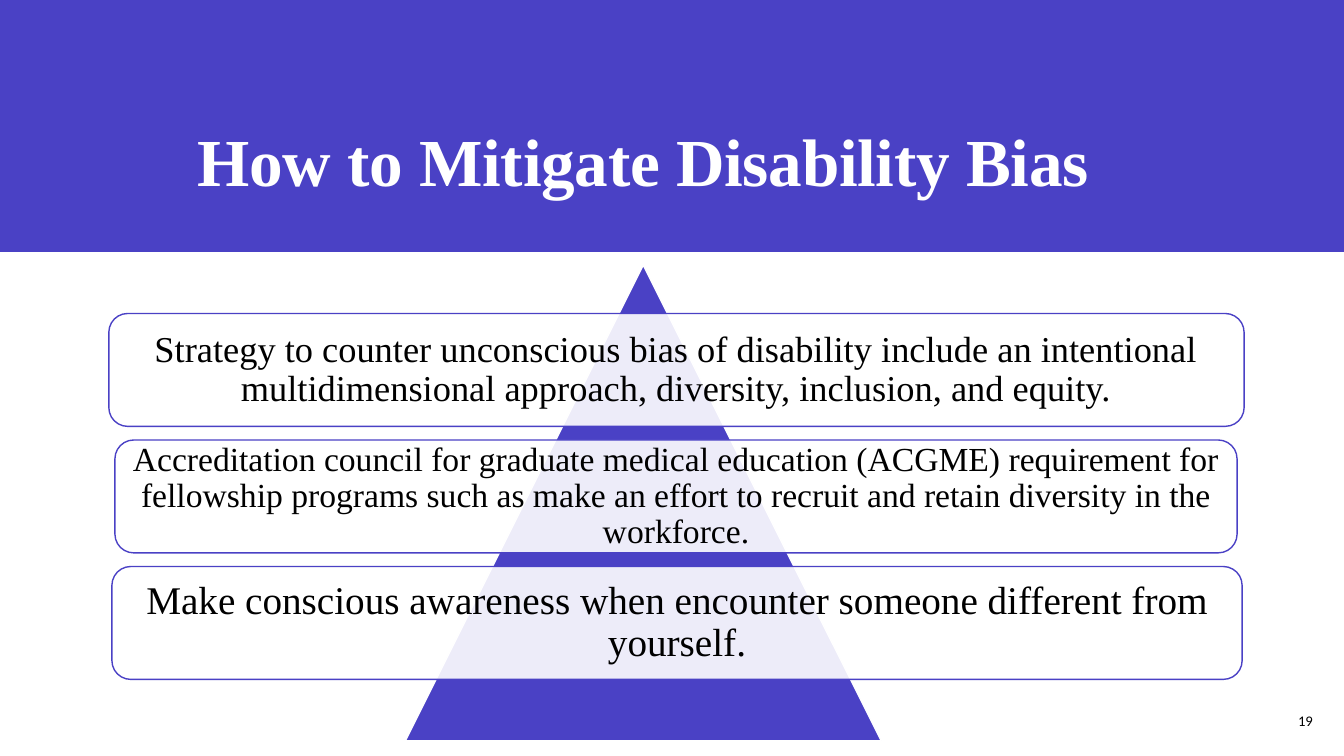
from dataclasses import dataclass

from lxml import etree
from pptx import Presentation
from pptx.dml.color import RGBColor
from pptx.enum.shapes import MSO_SHAPE
from pptx.enum.text import MSO_ANCHOR, MSO_AUTO_SIZE, PP_ALIGN
from pptx.oxml.ns import qn
from pptx.shapes.autoshape import Shape
from pptx.slide import Slide
from pptx.text.text import TextFrame
from pptx.util import Inches, Pt

RECT = MSO_SHAPE.RECTANGLE
TRIANGLE = MSO_SHAPE.ISOSCELES_TRIANGLE
ROUNDED = MSO_SHAPE.ROUNDED_RECTANGLE
MIDDLE, BOTTOM = MSO_ANCHOR.MIDDLE, MSO_ANCHOR.BOTTOM
CENTER, RIGHT = PP_ALIGN.CENTER, PP_ALIGN.RIGHT
NO_FIT = MSO_AUTO_SIZE.NONE


@dataclass(frozen=True)
class Theme:
    accent: RGBColor = RGBColor(0x4A, 0x41, 0xC5)
    white: RGBColor = RGBColor(0xFF, 0xFF, 0xFF)
    black: RGBColor = RGBColor(0, 0, 0)
    serif: str = "Times New Roman"
    sans: str = "Calibri"
    title_size: float = 48
    number_size: float = 10.5
    strategy_sizes: tuple[float, ...] = (26, 24, 28)


@dataclass(frozen=True)
class Strategy:
    text: str
    left: float
    width: float
    size: float
    inset: float


THEME = Theme()
STRATEGY_TOP, STRATEGY_HEIGHT, STRATEGY_PITCH = 3.11, 1.12, 1.255
STRATEGIES = [
    Strategy("Strategy to counter unconscious bias of disability include an intentional "
             "multidimensional approach, diversity, inclusion, and equity.",
             1.08, 11.26, THEME.strategy_sizes[0], 0.11),
    Strategy("Accreditation council for graduate medical education (ACGME) requirement for "
             "fellowship programs such as make an effort to recruit and retain diversity in "
             "the workforce.",
             1.14, 11.13, THEME.strategy_sizes[1], 0.1),
    Strategy("Make conscious awareness when encounter someone different from yourself.",
             1.11, 11.21, THEME.strategy_sizes[2], 0.12),
]


def add_block(s: Slide, kind: MSO_SHAPE, left: float, top: float, width: float,
              height: float, fill: RGBColor, line: RGBColor | None = None) -> Shape:
    sp = s.shapes.add_shape(kind, Inches(left), Inches(top), Inches(width), Inches(height))
    sp.shadow.inherit = False
    sp.fill.solid()
    sp.fill.fore_color.rgb = fill
    if line is None:
        sp.line.fill.background()
    else:
        sp.line.color.rgb = line
        sp.line.width = Pt(1)
    return sp


def set_opacity(sp: Shape, percent: int) -> None:
    color = sp._element.spPr.find(qn("a:solidFill"))[0]
    etree.SubElement(color, qn("a:alpha")).set("val", str(percent * 1000))


def write_text(tf: TextFrame, text: str, size: float, color: RGBColor, font: str,
               align: PP_ALIGN, anchor: MSO_ANCHOR, spacing: float = 1.0,
               bold: bool = False, tracking: float = 0) -> None:
    tf.word_wrap = True
    tf.auto_size = NO_FIT
    tf.vertical_anchor = anchor
    p = tf.paragraphs[0]
    p.alignment = align
    p.line_spacing = spacing
    r = p.add_run()
    r.text = text
    r.font.size = Pt(size)
    r.font.name = font
    r.font.bold = bold
    r.font.color.rgb = color
    if tracking:
        r.font._element.set("spc", str(round(tracking * 100)))


def add_title(s: Slide) -> None:
    title = s.shapes.title
    title.left, title.top = Inches(1.17), Inches(0.4)
    title.width, title.height = Inches(10.42), Inches(1.64)
    write_text(title.text_frame, "How to Mitigate Disability Bias", THEME.title_size,
               THEME.white, THEME.serif, CENTER, BOTTOM, 0.9, bold=True, tracking=-0.2)
    band = add_block(s, RECT, 0, 0, 13.33, 2.5, THEME.accent)
    title._element.addprevious(band._element)


def add_strategy(s: Slide, strategy: Strategy, top: float) -> None:
    sp = add_block(s, ROUNDED, strategy.left, top, strategy.width, STRATEGY_HEIGHT,
                   THEME.white, THEME.accent)
    set_opacity(sp, 90)
    tf = sp.text_frame
    tf.margin_left = tf.margin_right = Inches(strategy.inset)
    tf.margin_top = tf.margin_bottom = Inches(strategy.inset)
    write_text(tf, strategy.text, strategy.size, THEME.black, THEME.serif,
               CENTER, MIDDLE, 0.9)


def add_slide_number(s: Slide) -> None:
    box = s.shapes.add_textbox(Inches(12.43), Inches(6.95), Inches(0.69), Inches(0.4))
    write_text(box.text_frame, "19", THEME.number_size, THEME.black, THEME.sans,
               RIGHT, MIDDLE)


def main() -> None:
    prs = Presentation()
    prs.slide_width, prs.slide_height = Inches(13.33), Inches(7.5)
    s = prs.slides.add_slide(prs.slide_layouts[5])
    add_title(s)
    add_block(s, TRIANGLE, 4.02, 2.63, 4.72, 4.72, THEME.accent, THEME.white)
    for i, strategy in enumerate(STRATEGIES):
        add_strategy(s, strategy, STRATEGY_TOP + i * STRATEGY_PITCH)
    add_slide_number(s)
    prs.save("out.pptx")


if __name__ == "__main__":
    main()
